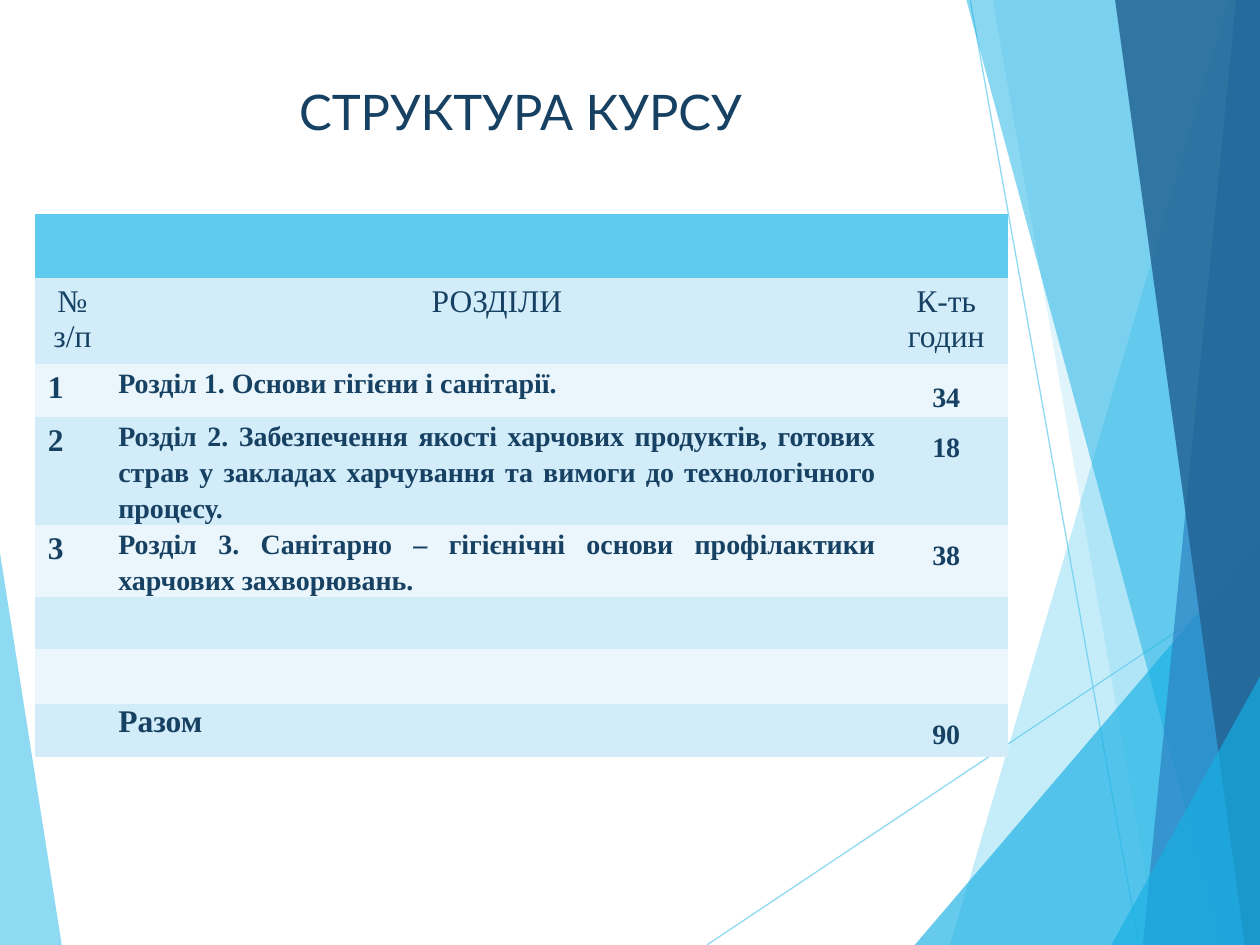
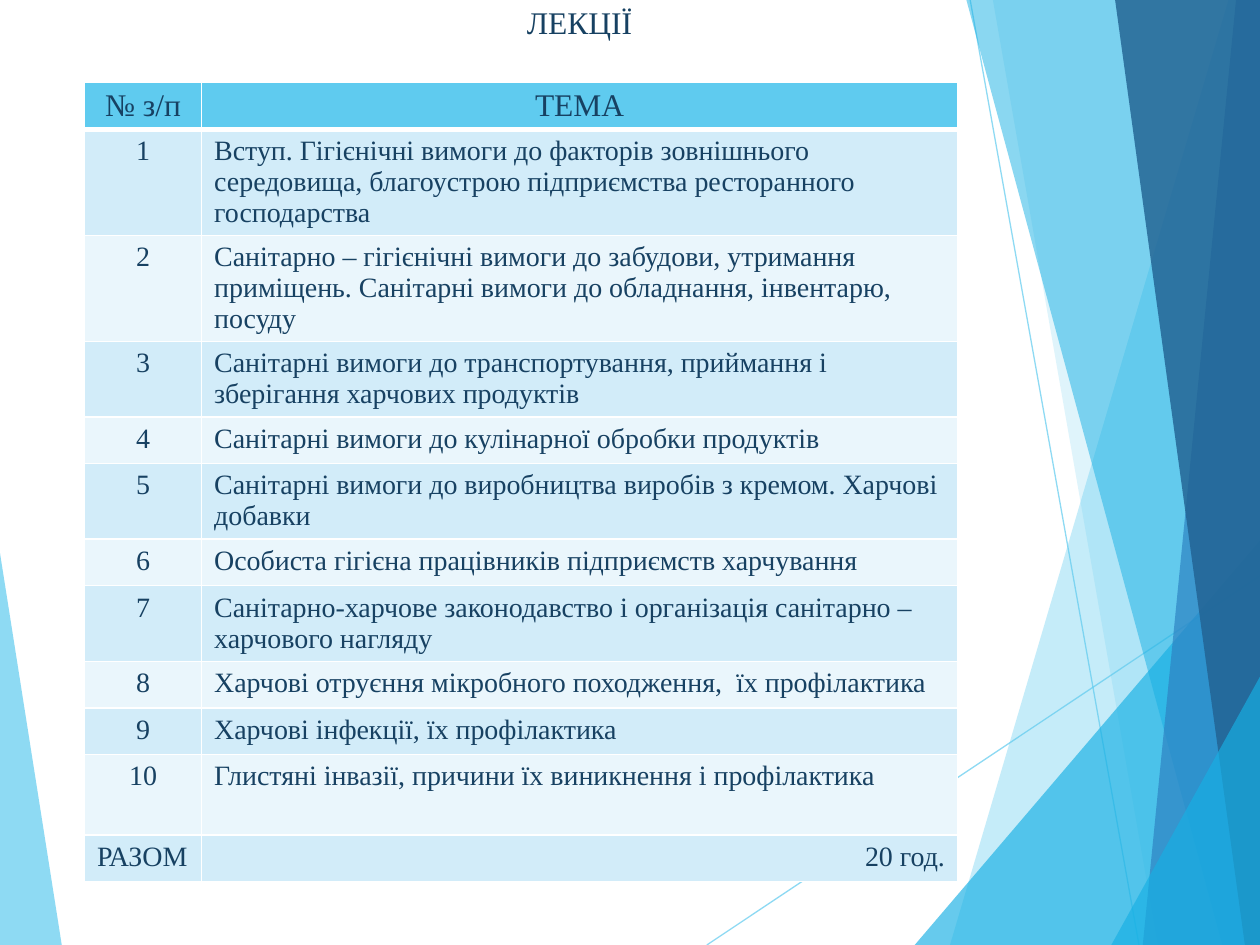
"""Build two slides on a hygiene course: its structure and its lectures."""
from dataclasses import dataclass, replace

from lxml.etree import SubElement
from pptx import Presentation
from pptx.dml.color import RGBColor
from pptx.enum.shapes import MSO_CONNECTOR
from pptx.enum.text import MSO_ANCHOR, MSO_AUTO_SIZE, PP_ALIGN
from pptx.oxml.ns import qn
from pptx.util import Inches, Pt

STRAIGHT = MSO_CONNECTOR.STRAIGHT
TOP, MIDDLE = MSO_ANCHOR.TOP, MSO_ANCHOR.MIDDLE
NO_AUTO_SIZE = MSO_AUTO_SIZE.NONE
LEFT, CENTER, RIGHT, JUSTIFY = PP_ALIGN.LEFT, PP_ALIGN.CENTER, PP_ALIGN.RIGHT, PP_ALIGN.JUSTIFY

SLIDE_WIDTH, SLIDE_HEIGHT = Inches(10), Inches(7.5)
GRID_COLUMNS, GRID_ROWS = 100, 75
TITLE_ONLY = 5
PLAIN_TABLE_STYLE = "{2D5ABB26-0587-4C30-8999-92F81FD0307C}"
SERIF, SANS = "Times New Roman", "Lato"
COLORS = {
    "text": "174162",
    "sky": "5FCBEF",
    "azure": "17B0E4",
    "blue": "2E83C3",
    "navy": "226292",
    "dark_band": "D2ECF9",
    "light_band": "EAF6FC",
    "border": "FFFFFF",
}


@dataclass(frozen=True)
class Facet:
    """A translucent polygon given by grid points."""

    color: str
    opacity: int
    points: tuple


@dataclass(frozen=True)
class Ray:
    """A thin translucent line between two grid points."""

    start: tuple
    end: tuple


@dataclass(frozen=True)
class Title:
    """A slide title with its box on the grid."""

    text: str
    box: tuple
    size: int
    font: str


@dataclass(frozen=True)
class CellStyle:
    """The look of the text in a table cell."""

    size: int = 16
    align: PP_ALIGN = LEFT
    bold: bool = False
    line_spacing: float = 1.0
    space_after: int = 0
    tight: bool = False
    anchor: MSO_ANCHOR = TOP


@dataclass(frozen=True)
class TableLayout:
    """A table's corner, column widths and row heights on the grid."""

    left: float
    top: float
    widths: tuple
    heights: tuple
    bordered: bool


DECORATION = (
    Facet("sky", 70, ((0, 43.9), (4.9, 75), (0, 75))),
    Ray((56.1, 75), (100, 45.7)),
    Ray((77, 0), (90.4, 75)),
    Facet("sky", 36, ((97.5, 0), (75.4, 75), (100, 75), (100, 0))),
    Facet("sky", 20, ((78.8, 0), (91.9, 75), (100, 75), (100, 0))),
    Facet("azure", 66, ((72.6, 75), (100, 42.9), (100, 75))),
    Facet("azure", 50, ((76.7, 0), (97, 75), (100, 75), (100, 0))),
    Facet("blue", 70, ((98.1, 0), (90.7, 75), (100, 75), (100, 0))),
    Facet("navy", 82, ((88.5, 0), (98.8, 75), (100, 75), (100, 0))),
    Facet("azure", 66, ((88.2, 75), (100, 53.7), (100, 75))),
)

HEADING = CellStyle(size=18, align=CENTER)
SECTION_NUMBER = CellStyle(size=18, bold=True)
SECTION = CellStyle(align=JUSTIFY, bold=True, line_spacing=1.15, space_after=10, tight=True)
HOURS = CellStyle(align=CENTER, bold=True, line_spacing=1.5, tight=True)
FIRST_HOURS = replace(HOURS, space_after=10, anchor=MIDDLE)
TOTAL = CellStyle(size=18, bold=True, tight=True)
LECTURE_NUMBER = CellStyle(align=CENTER)
LECTURE = CellStyle()
LECTURE_TOTAL = CellStyle(align=RIGHT)

STRUCTURE_TITLE = Title("СТРУКТУРА КУРСУ", (16.3, 6, 50, 5.7), 28, SANS)
STRUCTURE_LAYOUT = TableLayout(
    2.8, 17, (5.9, 61.5, 9.8), (5.1, 6.8, 4.2, 8.6, 5.6, 4.1, 4.4, 4.2), False
)
STRUCTURE_ROWS = (
    (),
    (("№ з/п", HEADING), ("РОЗДІЛИ", HEADING), ("К-ть годин", HEADING)),
    (
        ("1", SECTION_NUMBER),
        ("Розділ 1. Основи гігієни і санітарії.", SECTION),
        ("34", FIRST_HOURS),
    ),
    (
        ("2", SECTION_NUMBER),
        (
            "Розділ 2. Забезпечення якості харчових продуктів, готових страв у закладах "
            "харчування та вимоги до технологічного процесу.",
            SECTION,
        ),
        ("18", HOURS),
    ),
    (
        ("3", SECTION_NUMBER),
        (
            "Розділ 3. Санітарно – гігієнічні основи профілактики харчових захворювань.",
            SECTION,
        ),
        ("38", HOURS),
    ),
    (),
    (),
    (("", TOTAL), ("Разом", TOTAL), ("90", HOURS)),
)

LECTURES_TITLE = Title("ЛЕКЦІЇ", (20.9, -0.3, 50.2, 4), 18, SERIF)
LECTURES_LAYOUT = TableLayout(
    6.7, 6.5, (9.3, 60), (3.7, 8.4, 8.4, 6, 3.7, 6, 3.7, 6, 3.7, 3.7, 6.4, 3.7), True
)
LECTURE_TOPICS = (
    "Вступ. Гігієнічні вимоги до факторів зовнішнього середовища, благоустрою "
    "підприємства ресторанного господарства",
    "Санітарно – гігієнічні вимоги до забудови, утримання приміщень. Санітарні вимоги "
    "до обладнання, інвентарю, посуду",
    "Санітарні вимоги до транспортування, приймання і зберігання харчових продуктів",
    "Санітарні вимоги до кулінарної обробки продуктів",
    "Санітарні вимоги до виробництва виробів з кремом. Харчові добавки",
    "Особиста гігієна працівників підприємств харчування",
    "Санітарно-харчове законодавство і організація санітарно – харчового нагляду",
    "Харчові отруєння мікробного походження,  їх профілактика",
    "Харчові інфекції, їх профілактика",
    "Глистяні інвазії, причини їх виникнення і профілактика",
)
LECTURE_ROWS = (
    (("№ з/п", HEADING), ("ТЕМА", HEADING)),
    *(
        ((str(number), LECTURE_NUMBER), (topic, LECTURE))
        for number, topic in enumerate(LECTURE_TOPICS, 1)
    ),
    (("РАЗОМ", LECTURE), ("20 год.", LECTURE_TOTAL)),
)


def across(columns: float) -> int:
    """Return the length of some grid columns."""
    return round(SLIDE_WIDTH * columns / GRID_COLUMNS)


def down(rows: float) -> int:
    """Return the length of some grid rows."""
    return round(SLIDE_HEIGHT * rows / GRID_ROWS)


def color_of(name: str) -> RGBColor:
    """Return a palette colour."""
    return RGBColor.from_string(COLORS[name])


def set_opacity(shape, percent: int) -> None:
    """Make every colour of a shape translucent."""
    for color in list(shape.element.iter(qn("a:srgbClr"))):
        SubElement(color, qn("a:alpha"), val=str(percent * 1000))


def draw_facet(slide, facet: Facet) -> None:
    """Draw one translucent polygon."""
    start, *others = [(across(x), down(y)) for x, y in facet.points]
    builder = slide.shapes.build_freeform(*start)
    builder.add_line_segments(others, close=True)
    shape = builder.convert_to_shape()
    shape.shadow.inherit = False
    shape.fill.solid()
    shape.fill.fore_color.rgb = color_of(facet.color)
    shape.line.fill.background()
    set_opacity(shape, facet.opacity)


def draw_ray(slide, ray: Ray) -> None:
    """Draw one thin translucent line."""
    (x1, y1), (x2, y2) = ray.start, ray.end
    connector = slide.shapes.add_connector(STRAIGHT, across(x1), down(y1), across(x2), down(y2))
    connector.line.color.rgb = color_of("sky")
    connector.line.width = Pt(0.75)
    SubElement(connector.element.spPr, qn("a:effectLst"))
    set_opacity(connector, 70)


def format_paragraph(paragraph, size: int, font: str, align: PP_ALIGN, bold: bool = False) -> None:
    """Format a paragraph and its runs in the text colour."""
    paragraph.alignment = align
    for run in paragraph.runs:
        run.font.size = Pt(size)
        run.font.name = font
        run.font.bold = bold
        run.font.color.rgb = color_of("text")


def place_title(slide, title: Title) -> None:
    """Move and format the title placeholder."""
    shape = slide.shapes.title
    left, top, width, height = title.box
    shape.left, shape.top = across(left), down(top)
    shape.width, shape.height = across(width), down(height)
    shape.text_frame.text = title.text
    shape.text_frame.word_wrap = True
    shape.text_frame.auto_size = NO_AUTO_SIZE
    shape.text_frame.vertical_anchor = TOP
    format_paragraph(shape.text_frame.paragraphs[0], title.size, title.font, CENTER)


def add_borders(cell, header: bool) -> None:
    """Give a cell white borders, with a thicker one below the header."""
    properties = cell._tc.get_or_add_tcPr()
    for side in ("lnL", "lnR", "lnT", "lnB"):
        width = Pt(3 if header and side == "lnB" else 1)
        line = SubElement(properties, qn(f"a:{side}"), w=str(width))
        fill = SubElement(line, qn("a:solidFill"))
        SubElement(fill, qn("a:srgbClr"), val=COLORS["border"])


def write_cell(cell, text: str, style: CellStyle) -> None:
    """Write and format the text of a cell."""
    cell.text_frame.text = text
    cell.vertical_anchor = style.anchor
    if style.tight:
        cell.margin_left = cell.margin_right = across(0.7)
        cell.margin_top = cell.margin_bottom = 0
    paragraph = cell.text_frame.paragraphs[0]
    paragraph.line_spacing = style.line_spacing
    paragraph.space_after = Pt(style.space_after)
    format_paragraph(paragraph, style.size, SERIF, style.align, style.bold)


def add_banded_table(slide, layout: TableLayout, rows: tuple):
    """Add a table with a header row and alternating bands."""
    frame = slide.shapes.add_table(
        len(layout.heights), len(layout.widths), across(layout.left), down(layout.top),
        across(sum(layout.widths)), down(sum(layout.heights)),
    )
    for style_id in frame.element.iter(qn("a:tableStyleId")):
        style_id.text = PLAIN_TABLE_STYLE
    table = frame.table
    table.horz_banding = False
    for column, width in zip(table.columns, layout.widths):
        column.width = across(width)
    for index, (row, height) in enumerate(zip(table.rows, layout.heights)):
        row.height = down(height)
        band = "sky" if index == 0 else "dark_band" if index % 2 else "light_band"
        for cell in row.cells:
            if layout.bordered:
                add_borders(cell, index == 0)
            cell.fill.solid()
            cell.fill.fore_color.rgb = color_of(band)
        for cell, (text, style) in zip(row.cells, rows[index]):
            write_cell(cell, text, style)
    return table


def add_course_slide(presentation, title: Title, layout: TableLayout, rows: tuple):
    """Add a decorated slide with a title and return its table."""
    slide = presentation.slides.add_slide(presentation.slide_layouts[TITLE_ONLY])
    for item in DECORATION:
        draw = draw_facet if isinstance(item, Facet) else draw_ray
        draw(slide, item)
    place_title(slide, title)
    return add_banded_table(slide, layout, rows)


def main() -> None:
    """Build and save the presentation."""
    presentation = Presentation()
    presentation.slide_width, presentation.slide_height = SLIDE_WIDTH, SLIDE_HEIGHT
    structure = add_course_slide(presentation, STRUCTURE_TITLE, STRUCTURE_LAYOUT, STRUCTURE_ROWS)
    structure.cell(0, 0).merge(structure.cell(0, 2))
    add_course_slide(presentation, LECTURES_TITLE, LECTURES_LAYOUT, LECTURE_ROWS)
    presentation.save("out.pptx")


if __name__ == "__main__":
    main()
